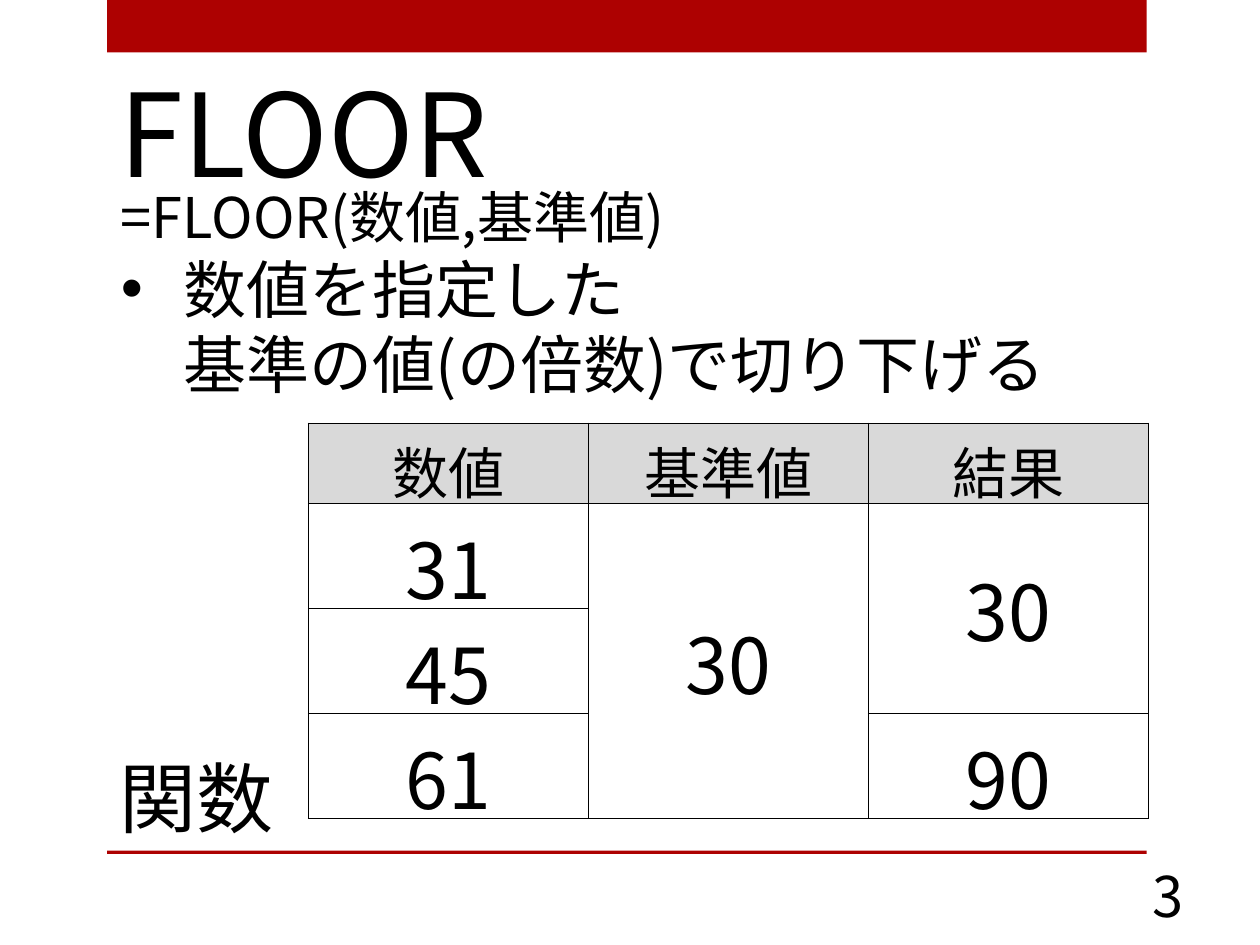
from dataclasses import dataclass

from lxml.etree import SubElement
from pptx import Presentation
from pptx.dml.color import RGBColor
from pptx.enum.shapes import MSO_SHAPE
from pptx.enum.text import MSO_ANCHOR, PP_ALIGN
from pptx.oxml.ns import qn
from pptx.util import Pt

FONT = "Noto Sans CJK JP"
RED, BLACK, GREY = "AD0101", "000000", "D9D9D9"


@dataclass(frozen=True)
class Box:
    left: float
    top: float
    width: float
    height: float

    def place(self) -> tuple:
        return Pt(self.left), Pt(self.top), Pt(self.width), Pt(self.height)


@dataclass(frozen=True)
class Label:
    text: str
    box: Box
    size: float
    align: PP_ALIGN = PP_ALIGN.LEFT


@dataclass(frozen=True)
class Entry:
    row: int
    column: int
    text: str
    row_span: int = 1
    anchor: MSO_ANCHOR = MSO_ANCHOR.TOP


BARS = [Box(61.2, 0, 594, 30), Box(61.2, 486, 594, 2)]
LABELS = [
    Label("関数", Box(61.2, 425.5, 106, 60.5), 44),
    Label("3", Box(615, 489, 105, 46), 32, PP_ALIGN.CENTER),
]
HEADINGS = ["数値", "基準値", "結果"]
ENTRIES = [Entry(0, column, heading) for column, heading in enumerate(HEADINGS)] + [
    Entry(1, 0, "31"),
    Entry(2, 0, "45"),
    Entry(3, 0, "61"),
    Entry(1, 1, "30", 3, MSO_ANCHOR.MIDDLE),
    Entry(1, 2, "30", 2, MSO_ANCHOR.MIDDLE),
    Entry(3, 2, "90", 1, MSO_ANCHOR.MIDDLE),
]
ROW_HEIGHTS = [45, 60, 60, 60]


def color(value: str) -> RGBColor:
    return RGBColor.from_string(value)


def format_paragraph(paragraph, size: float, align: PP_ALIGN = PP_ALIGN.LEFT) -> None:
    paragraph.alignment = align
    for run in paragraph.runs:
        run.font.size = Pt(size)
        run.font.name = FONT
        run.font.color.rgb = color(BLACK)
        SubElement(run.font._element, qn("a:ea"), typeface=FONT)


def add_bar(slide, box: Box) -> None:
    bar = slide.shapes.add_shape(MSO_SHAPE.RECTANGLE, *box.place())
    bar.shadow.inherit = False
    bar.fill.solid()
    bar.fill.fore_color.rgb = color(RED)
    bar.line.fill.background()


def add_title(slide, label: Label) -> None:
    title = slide.shapes.title
    title.left, title.top, title.width, title.height = label.box.place()
    frame = title.text_frame
    frame.text = label.text
    frame.vertical_anchor = MSO_ANCHOR.TOP
    format_paragraph(frame.paragraphs[0], label.size, label.align)


def add_label(slide, label: Label) -> None:
    frame = slide.shapes.add_textbox(*label.box.place()).text_frame
    frame.word_wrap = True
    frame.text = label.text
    format_paragraph(frame.paragraphs[0], label.size, label.align)


def add_explanation(slide) -> None:
    frame = slide.shapes.add_textbox(*Box(62, 101, 586, 220).place()).text_frame
    frame.word_wrap = True
    syntax = frame.paragraphs[0]
    syntax.text = "=FLOOR(数値,基準値)"
    format_paragraph(syntax, 32)
    meaning = frame.add_paragraph()
    meaning.text = "数値を指定した\v基準の値(の倍数)で切り下げる"
    format_paragraph(meaning, 36)
    properties = meaning._p.get_or_add_pPr()
    properties.set("marL", str(Pt(36)))
    properties.set("indent", str(Pt(-36)))
    SubElement(properties, qn("a:buFont"), typeface="Arial")
    SubElement(properties, qn("a:buChar"), char="•")


def add_borders(cell) -> None:
    properties = cell._tc.get_or_add_tcPr()
    for index, side in enumerate(("lnL", "lnR", "lnT", "lnB")):
        border = SubElement(properties, qn(f"a:{side}"), w=str(Pt(1)))
        fill = SubElement(border, qn("a:solidFill"))
        SubElement(fill, qn("a:srgbClr"), val=BLACK)
        properties.remove(border)
        properties.insert(index, border)


def add_examples(slide) -> None:
    box = Box(176.4, 242, 480, sum(ROW_HEIGHTS))
    table = slide.shapes.add_table(len(ROW_HEIGHTS), len(HEADINGS), *box.place()).table
    for row, height in zip(table.rows, ROW_HEIGHTS):
        row.height = Pt(height)
    for cell in table.iter_cells():
        cell.fill.background()
        add_borders(cell)
    for entry in ENTRIES:
        cell = table.cell(entry.row, entry.column)
        if entry.row_span > 1:
            cell.merge(table.cell(entry.row + entry.row_span - 1, entry.column))
        cell.text_frame.text = entry.text
        cell.vertical_anchor = entry.anchor
        is_heading = entry.row == 0
        format_paragraph(cell.text_frame.paragraphs[0], 32 if is_heading else 44, PP_ALIGN.CENTER)
        if is_heading:
            cell.fill.solid()
            cell.fill.fore_color.rgb = color(GREY)


def main() -> None:
    presentation = Presentation()
    presentation.slide_width, presentation.slide_height = Pt(720), Pt(540)
    slide = presentation.slides.add_slide(presentation.slide_layouts[5])
    for bar in BARS:
        add_bar(slide, bar)
    add_title(slide, Label("FLOOR", Box(61.2, 31.7, 294.5, 87), 66))
    for label in LABELS:
        add_label(slide, label)
    add_explanation(slide)
    add_examples(slide)
    presentation.save("out.pptx")


if __name__ == "__main__":
    main()
